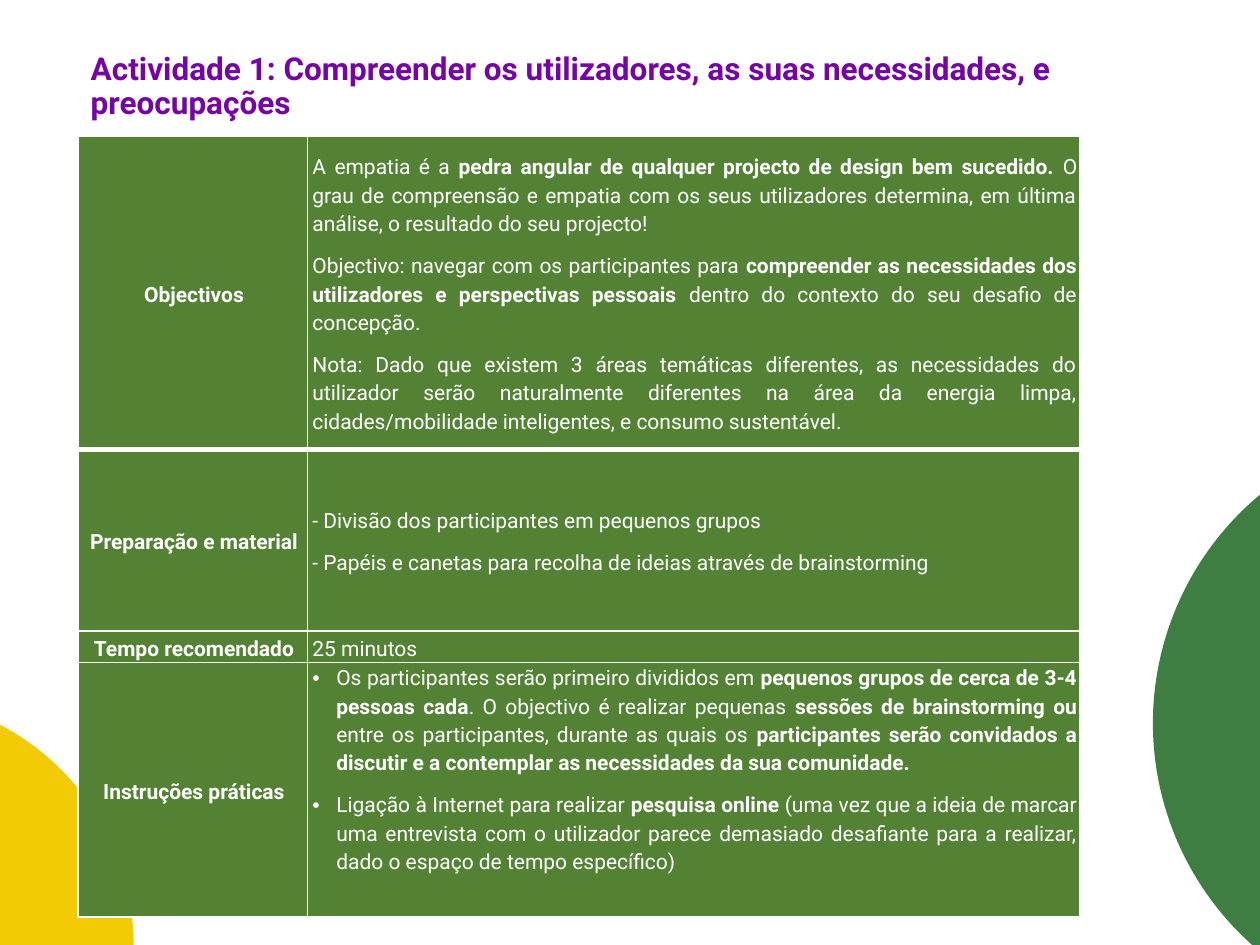
from lxml import etree
from pptx import Presentation
from pptx.dml.color import RGBColor
from pptx.enum.shapes import MSO_SHAPE
from pptx.enum.text import MSO_ANCHOR, MSO_AUTO_SIZE, PP_ALIGN
from pptx.oxml.ns import qn
from pptx.util import Inches, Pt

OVAL = MSO_SHAPE.OVAL
TOP, MIDDLE = MSO_ANCHOR.TOP, MSO_ANCHOR.MIDDLE
LEFT, CENTER, JUSTIFY = PP_ALIGN.LEFT, PP_ALIGN.CENTER, PP_ALIGN.JUSTIFY
NO_AUTOFIT = MSO_AUTO_SIZE.NONE

FONT = "Roboto"
WHITE = RGBColor(0xFF, 0xFF, 0xFF)
PURPLE = RGBColor(0x75, 0x03, 0xA6)
CELL_GREEN = RGBColor(0x54, 0x82, 0x35)
CIRCLE_GREEN = RGBColor(0x3F, 0x7E, 0x43)
YELLOW = RGBColor(0xF2, 0xCB, 0x05)

TITLE = ("Actividade 1: Compreender os utilizadores, as suas necessidades, "
         "e preocupações")

# Each row: label, height, anchor of the text, bulleted, paragraphs.
# The runs of a paragraph alternate between regular and bold.
ROWS = [
    ("Objectivos", 2.49, MIDDLE, False, [
        ["A empatia é a ",
         "pedra angular de qualquer projecto de design bem sucedido. ",
         "O grau de compreensão e empatia com os seus utilizadores determina, "
         "em última análise, o resultado do seu projecto!"],
        ["Objectivo: navegar com os participantes para ",
         "compreender as necessidades dos utilizadores e perspectivas pessoais ",
         "dentro do contexto do seu desafio de concepção."],
        ["Nota: Dado que existem 3 áreas temáticas diferentes, as necessidades "
         "do utilizador serão naturalmente diferentes na área da energia limpa, "
         "cidades/mobilidade inteligentes, e consumo sustentável."],
    ]),
    ("Preparação e material", 1.44, MIDDLE, False, [
        ["- Divisão dos participantes em pequenos grupos"],
        ["- Papéis e canetas para recolha de ideias através de brainstorming"],
    ]),
    ("Tempo recomendado", 0.25, MIDDLE, False, [["25 minutos"]]),
    ("Instruções práticas", 2.02, TOP, True, [
        ["Os participantes serão primeiro divididos em ",
         "pequenos grupos de cerca de 3-4 pessoas cada",
         ". O objectivo é realizar pequenas ",
         "sessões de brainstorming ou ",
         "entre os participantes, durante as quais os ",
         "participantes serão convidados a discutir e a contemplar as "
         "necessidades da sua comunidade."],
        ["Ligação à Internet para realizar ",
         "pesquisa online ",
         "(uma vez que a ideia de marcar uma entrevista com o utilizador parece "
         "demasiado desafiante para a realizar, dado o espaço de tempo "
         "específico)"],
    ]),
]


def add_run(para, text, size, color, bold):
    span = para.add_run()
    span.text = text
    span.font.name = FONT
    span.font.size = Pt(size)
    span.font.bold = bold
    span.font.color.rgb = color


def add_circle(page, left, top, diameter, color):
    circle = page.shapes.add_shape(OVAL, Inches(left), Inches(top),
                                   Inches(diameter), Inches(diameter))
    circle.shadow.inherit = False
    circle.fill.solid()
    circle.fill.fore_color.rgb = color
    circle.line.fill.background()


def place_title(page, left, top, width, height):
    title = page.shapes.title
    title.left, title.top = Inches(left), Inches(top)
    title.width, title.height = Inches(width), Inches(height)
    frame = title.text_frame
    frame.word_wrap = True
    frame.auto_size = NO_AUTOFIT
    frame.vertical_anchor = TOP
    para = frame.paragraphs[0]
    para.alignment = LEFT
    para.line_spacing = 0.9
    add_run(para, TITLE, 18, PURPLE, True)


def set_borders(cell, bottom_width):
    properties = cell._tc.get_or_add_tcPr()
    for side, width in (("L", 1), ("R", 1), ("T", 1), ("B", bottom_width)):
        line = etree.SubElement(properties, qn(f"a:ln{side}"), w=str(Pt(width)))
        fill = etree.SubElement(line, qn("a:solidFill"))
        etree.SubElement(fill, qn("a:srgbClr"), val=str(WHITE))


def format_para(para, alignment, bulleted):
    para.alignment = alignment
    para.line_spacing = 1.15
    para.space_after = Pt(8)
    properties = para._p.get_or_add_pPr()
    properties.set("marL", str(Inches(0.21 if bulleted else 0.02)))
    properties.set("indent", str(Inches(-0.19 if bulleted else 0)))
    if bulleted:
        etree.SubElement(properties, qn("a:buFont"), typeface="Arial")
        etree.SubElement(properties, qn("a:buChar"), char="•")


def fill_cell(cell, paragraphs, alignment, anchor, bulleted, label, bottom_width):
    set_borders(cell, bottom_width)
    cell.fill.solid()
    cell.fill.fore_color.rgb = CELL_GREEN
    cell.vertical_anchor = anchor
    cell.margin_left = cell.margin_right = Inches(0.02)
    cell.margin_top = cell.margin_bottom = 0
    frame = cell.text_frame
    for number, texts in enumerate(paragraphs):
        para = frame.add_paragraph() if number else frame.paragraphs[0]
        format_para(para, alignment, bulleted)
        for position, text in enumerate(texts):
            add_run(para, text, 12, WHITE, label or position % 2 == 1)


def add_activity_table(page, left, top, column_widths):
    height = sum(row[1] for row in ROWS)
    table = page.shapes.add_table(
        len(ROWS), len(column_widths), Inches(left), Inches(top),
        Inches(sum(column_widths)), Inches(height)).table
    table.first_row = False
    table.horz_banding = False
    for column, width in zip(table.columns, column_widths):
        column.width = Inches(width)
    for index, (label, row_height, anchor, bulleted, paragraphs) in enumerate(ROWS):
        table.rows[index].height = Inches(row_height)
        bottom_width = 1 if index else 3
        fill_cell(table.cell(index, 0), [[label]], CENTER, MIDDLE, False,
                  True, bottom_width)
        fill_cell(table.cell(index, 1), paragraphs, JUSTIFY, anchor, bulleted,
                  False, bottom_width)


def main():
    deck = Presentation()
    deck.slide_width, deck.slide_height = Inches(10), Inches(7.5)
    page = deck.slides.add_slide(deck.slide_layouts[5])
    # Corner decoration
    add_circle(page, 9.15, 3.38, 4.72, CIRCLE_GREEN)
    add_circle(page, -2.88, 5.53, 3.94, YELLOW)
    # Content
    place_title(page, 0.62, 0.37, 8.59, 1.45)
    add_activity_table(page, 0.62, 1.08, (1.82, 6.13))
    deck.save("out.pptx")


if __name__ == "__main__":
    main()
